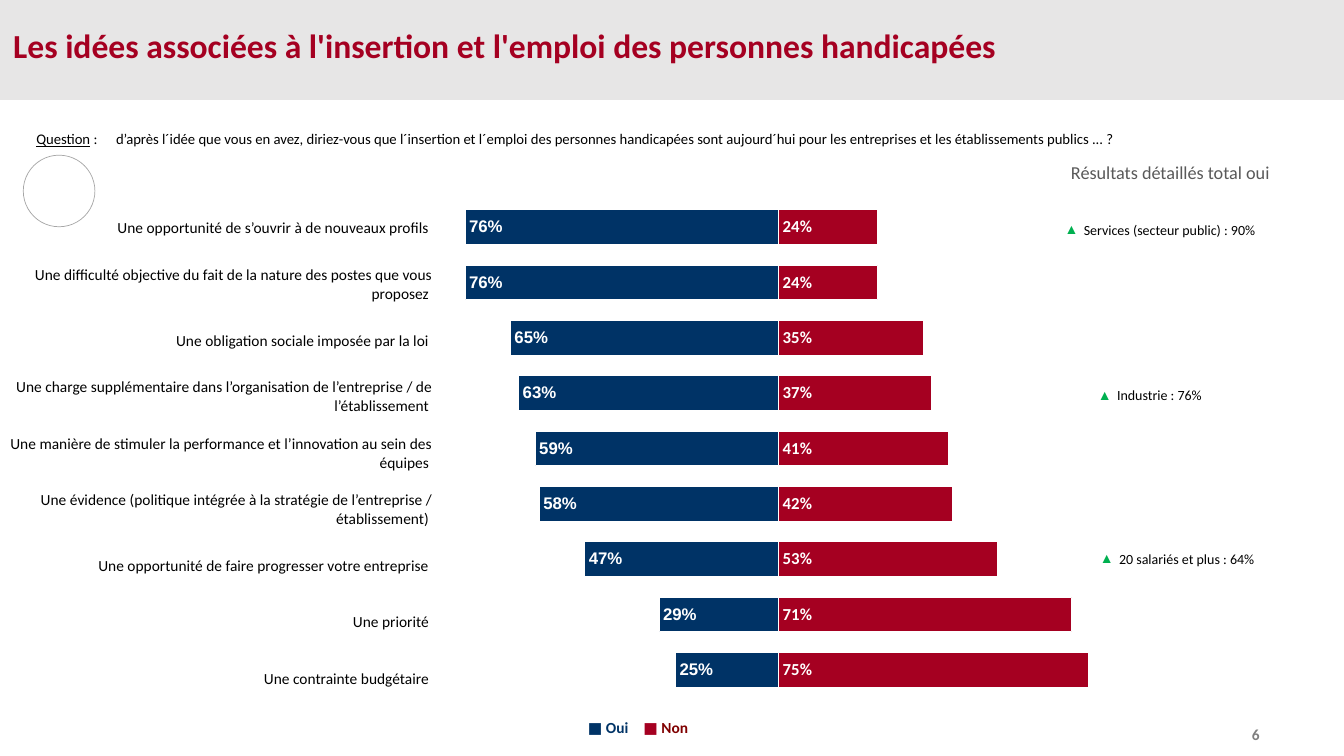
import pptx
import pptx.chart.data
import pptx.dml.color
import pptx.enum.chart
import pptx.enum.shapes
import pptx.enum.text
import pptx.oxml
import pptx.oxml.ns
import pptx.util

RGBColor = pptx.dml.color.RGBColor
ALIGN = pptx.enum.text.PP_ALIGN
ANCHOR = pptx.enum.text.MSO_ANCHOR
LABEL = pptx.enum.chart.XL_LABEL_POSITION

NAVY = RGBColor(0x00, 0x33, 0x66)
RED = RGBColor(0xA5, 0x00, 0x21)
MAROON = RGBColor(0x80, 0x00, 0x00)
BLACK = RGBColor(0, 0, 0)
WHITE = RGBColor(0xFF, 0xFF, 0xFF)
BAND_GREY = RGBColor(0xE7, 0xE6, 0xE6)
OUTLINE_GREY = RGBColor(0xA6, 0xA6, 0xA6)
HEADING_GREY = RGBColor(0x59, 0x59, 0x59)
NUMBER_GREY = RGBColor(0x80, 0x80, 0x80)
GREEN = RGBColor(0x00, 0xB0, 0x50)

TITLE = "Les idées associées à l'insertion et l'emploi des personnes handicapées"
QUESTION = (
    "Question",
    " :\td’après l´idée que vous en avez, diriez-vous que l´insertion et l´emploi des personnes "
    "handicapées sont aujourd´hui pour les entreprises et les établissements publics ... ?",
)
IDEAS = [
    ("Une opportunité de s’ouvrir à de nouveaux profils ", 0.76, 0.24),
    ("Une difficulté objective du fait de la nature des postes que vous proposez ", 0.76, 0.24),
    ("Une obligation sociale imposée par la loi ", 0.65, 0.35),
    ("Une charge supplémentaire dans l’organisation de l’entreprise / de l’établissement ", 0.63, 0.37),
    ("Une manière de stimuler la performance et l’innovation au sein des équipes ", 0.59, 0.41),
    ("Une évidence (politique intégrée à la stratégie de l’entreprise / établissement) ", 0.58, 0.42),
    ("Une opportunité de faire progresser votre entreprise ", 0.47, 0.53),
    ("Une priorité ", 0.29, 0.71),
    ("Une contrainte budgétaire ", 0.25, 0.75),
]
ANSWERS = [
    ("Oui", -1, NAVY, "Arial", LABEL.INSIDE_END),
    ("Non", 1, RED, "Calibri", LABEL.INSIDE_BASE),
]
DETAIL_HEADING = "Résultats détaillés total oui"
DETAILS = [
    ("Services (secteur public) : 90%", (78.47, 28.67, 16.65, 3.6)),
    ("Industrie : 76%", (80.95, 50.53, 10.8, 3.6)),
    ("20 salariés et plus : 64%", (81.1, 72.13, 15.53, 3.6)),
]

PLACES = {
    "band": (0, 0, 100, 13.2),
    "title": (0.23, 2.67, 98.27, 6.67),
    "question": (2.03, 16.67, 91.3, 3.47),
    "ideas": (-0.08, 26.4, 32.33, 67.07),
    "chart": (27.23, 26.4, 61.44, 65.87),
    "circle": (1.73, 20.53, 5.33, 9.47),
    "legend": (41.49, 94.27, 11.93, 3.87),
    "heading": (78.47, 20.67, 17.18, 4.27),
    "number": (90.47, 95.2, 5.93, 3.87),
}

deck = pptx.Presentation()
deck.slide_width = pptx.util.Inches(13.33)
deck.slide_height = pptx.util.Inches(7.5)
slide = deck.slides.add_slide(deck.slide_layouts[5])
shapes = slide.shapes


def place(shares):
    sides = (deck.slide_width, deck.slide_height) * 2
    return [round(side * share / 100) for side, share in zip(sides, shares)]


def apply(target, **values):
    for name, value in values.items():
        setattr(target, name, value)


def style(font, size, color, **values):
    apply(font, name="Calibri", size=pptx.util.Pt(size))
    apply(font, **values)
    font.color.rgb = color


def write(paragraph, text, size, color, **values):
    run = paragraph.add_run()
    run.text = text
    style(run.font, size, color, **values)


def add_paragraph_box(shares, align=ALIGN.LEFT):
    box = shapes.add_textbox(*place(shares))
    box.text_frame.word_wrap = True
    paragraph = box.text_frame.paragraphs[0]
    paragraph.alignment = align
    return box.text_frame, paragraph


def hang(paragraph, inches):
    indent = pptx.util.Inches(inches)
    properties = paragraph._p.get_or_add_pPr()
    properties.set("marL", str(indent))
    properties.set("indent", str(-indent))
    return properties


def append_xml(parent, xml):
    namespaces = pptx.oxml.ns.nsdecls("a")
    parent.append(pptx.oxml.parse_xml(xml.replace(" ", f" {namespaces} ", 1)))


def add_plain_shape(kind, shares, fill):
    shape = shapes.add_shape(kind, *place(shares))
    shape.shadow.inherit = False
    shape.fill.solid()
    shape.fill.fore_color.rgb = fill
    shape.line.fill.background()
    return shape


KINDS = pptx.enum.shapes.MSO_SHAPE
band = add_plain_shape(KINDS.RECTANGLE, PLACES["band"], BAND_GREY)
title = shapes.title
title.element.addprevious(band.element)
apply(title, **dict(zip(("left", "top", "width", "height"), place(PLACES["title"]))))
apply(title.text_frame, word_wrap=True, vertical_anchor=ANCHOR.MIDDLE)
title.text_frame.paragraphs[0].alignment = ALIGN.LEFT
write(title.text_frame.paragraphs[0], TITLE, 24, RED, bold=True)

idea_frame = shapes.add_table(len(IDEAS), 1, *place(PLACES["ideas"]))
ideas = idea_frame.table
apply(ideas, first_row=False, horz_banding=False)
hair = pptx.util.Inches(0.01)
for row, (idea, *shares) in enumerate(IDEAS):
    cell = ideas.cell(row, 0)
    cell.fill.background()
    apply(cell, vertical_anchor=ANCHOR.MIDDLE, margin_left=hair, margin_right=hair,
          margin_top=hair, margin_bottom=0)
    wording = cell.text_frame.paragraphs[0]
    wording.alignment = ALIGN.RIGHT
    write(wording, idea, 11, BLACK)

frame, question = add_paragraph_box(PLACES["question"], ALIGN.JUSTIFY)
apply(frame, margin_left=pptx.util.Inches(0.09), margin_right=pptx.util.Inches(0.36),
      margin_top=pptx.util.Inches(0.04), margin_bottom=pptx.util.Inches(0.04))
hang(question, 0.79)
for part, underline in zip(QUESTION, (True, False)):
    write(question, part, 10.5, BLACK, underline=underline)

results = pptx.chart.data.CategoryChartData(number_format="0%")
results.categories = [str(rank) for rank in range(1, len(IDEAS) + 1)]
for column, (answer, sign, *look) in enumerate(ANSWERS, 1):
    results.add_series(answer, [sign * idea[column] for idea in IDEAS])
chart = shapes.add_chart(pptx.enum.chart.XL_CHART_TYPE.BAR_STACKED,
                         *place(PLACES["chart"]), results).chart
apply(chart, has_legend=False, has_title=False)
style(chart.font, 18, BLACK)
apply(chart.category_axis, visible=False, reverse_order=True)
apply(chart.value_axis, visible=False, minimum_scale=-1, maximum_scale=1,
      has_major_gridlines=False)
plot = chart.plots[0]
apply(plot, gap_width=60, overlap=100, vary_by_categories=False)
for series, (answer, sign, color, font_name, position) in zip(plot.series, ANSWERS):
    series.invert_if_negative = False
    series.format.fill.solid()
    series.format.fill.fore_color.rgb = color
    series.format.line.color.rgb = WHITE
    series.format.line.width = pptx.util.Pt(0.75)
    labels = series.data_labels
    apply(labels, show_value=True, position=position,
          number_format="#,##0%;[White]#,##0%", number_format_is_linked=False)
    style(labels.font, 12, WHITE, bold=True, name=font_name)

plot_area = chart._chartSpace.chart.plotArea
for layout in plot_area.findall(pptx.oxml.ns.qn("c:layout")):
    plot_area.remove(layout)
plot_area.insert(0, pptx.oxml.parse_xml(
    f'<c:layout {pptx.oxml.ns.nsdecls("c")}><c:manualLayout><c:layoutTarget val="inner"/>'
    '<c:xMode val="edge"/><c:yMode val="edge"/><c:x val="0"/><c:y val="0"/>'
    '<c:w val="1"/><c:h val="1"/></c:manualLayout></c:layout>'))

circle = add_plain_shape(KINDS.OVAL, PLACES["circle"], WHITE)
circle.line.color.rgb = OUTLINE_GREY
circle.line.width = pptx.util.Pt(0.5)

frame, legend = add_paragraph_box(PLACES["legend"])
frame.margin_left = pptx.util.Inches(0.3)
append_xml(legend._p.get_or_add_pPr(),
           f'<a:tabLst ><a:tab pos="{pptx.util.Inches(0.55)}" algn="l"/></a:tabLst>')
for key, color in (("■ Oui\t", NAVY), ("■", RED), (" Non", MAROON)):
    write(legend, key, 11, color, bold=True)

for detail, shares in DETAILS:
    frame, note = add_paragraph_box(shares, ALIGN.JUSTIFY)
    bullet = hang(note, 0.19)
    append_xml(bullet, f'<a:buClr ><a:srgbClr val="{GREEN}"/></a:buClr>')
    append_xml(bullet, '<a:buFont typeface="Arial"/>')
    append_xml(bullet, '<a:buChar char="▲"/>')
    write(note, detail, 10, BLACK)

frame, heading = add_paragraph_box(PLACES["heading"], ALIGN.CENTER)
write(heading, DETAIL_HEADING, 13, HEADING_GREY)
frame, number = add_paragraph_box(PLACES["number"], ALIGN.CENTER)
write(number, "6", 11, NUMBER_GREY, bold=True)

deck.save("out.pptx")
